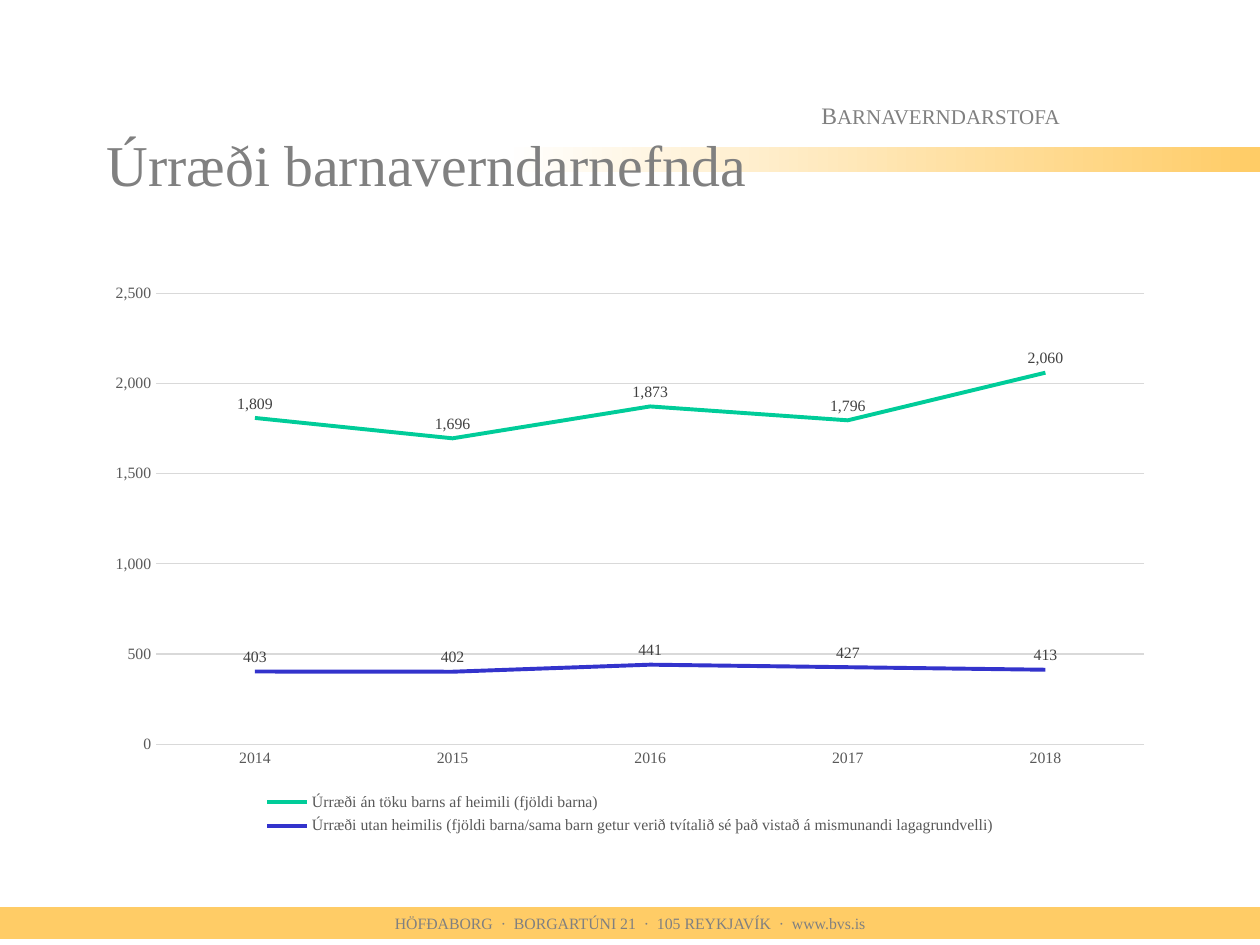
from pptx import Presentation, util as u
from pptx.chart import data as cd
from pptx.dml import color as dc
from pptx.enum import chart as ec, shapes as es, text as et

# Content
FACE = "Times New Roman"
GREY, GOLD, RULE, SOFT = "808080", "FFCC66", "D9D9D9", "595959"
TITLE = [("Úrræði barnaverndarnefnda", 33)]
HEAD = [("B", 13.5), ("ARNAVERNDARSTOFA", 12)]
FOOT = [("HÖFÐABORG  ·  BORGARTÚNI 21  ·  105 REYKJAVÍK  ·  www.bvs.is", 9)]
YEARS = ["2014", "2015", "2016", "2017", "2018"]
LINES = [
    ("Úrræði án töku barns af heimili (fjöldi barna)",
     "00CC99", [1809, 1696, 1873, 1796, 2060]),
    ("Úrræði utan heimilis (fjöldi barna/sama barn getur verið tvítalið "
     "sé það vistað á mismunandi lagagrundvelli)",
     "3333CC", [403, 402, 441, 427, 413]),
]

# Places in cm: left, top, width, height
WIDE, HIGH = 25.4, 19.05
EDGE = 1.9
BODY = WIDE - 2 * EDGE
AT = {
    "foot": (0, 18.29, WIDE, 0.64),
    "head": (16.31, 1.9, 8.05, 0.84),
    "band": (10.16, 2.97, WIDE - 10.16, 0.5),
    "title": (EDGE, 1.7, BODY, 3.18),
    "chart": (EDGE, 5.5, BODY, 11.43),
}


def place(name):
    return [u.Cm(n) for n in AT[name]]


def tint(code):
    return dc.RGBColor.from_string(code)


def setall(obj, vals):
    for key, val in vals.items():
        setattr(obj, key, val)


def style(font, size, code):
    setall(font, {"name": FACE, "size": u.Pt(size), "bold": False})
    font.color.rgb = tint(code)


def stroke(line, code, width):
    line.color.rgb = tint(code)
    line.width = u.Pt(width)


def write(shape, runs, side, mid=et.MSO_ANCHOR.MIDDLE):
    frame = shape.text_frame
    setall(frame, {"word_wrap": True, "vertical_anchor": mid})
    para = frame.paragraphs[0]
    para.alignment = side
    for words, size in runs:
        run = para.add_run()
        run.text = words
        style(run.font, size, GREY)


def bar(name):
    shape = page.shapes.add_shape(es.MSO_SHAPE.RECTANGLE, *place(name))
    shape.shadow.inherit = False
    shape.line.fill.background()
    return shape


deck = Presentation()
setall(deck, {"slide_width": u.Cm(WIDE), "slide_height": u.Cm(HIGH)})
page = deck.slides.add_slide(deck.slide_layouts[6])

# Footer
foot = bar("foot")
foot.fill.solid()
foot.fill.fore_color.rgb = tint(GOLD)
write(foot, FOOT, et.PP_ALIGN.CENTER)

# Header and fading band
head = page.shapes.add_textbox(*place("head"))
write(head, HEAD, et.PP_ALIGN.LEFT)
band = bar("band")
band.fill.gradient()
band.fill.gradient_angle = 0
for stop, spot, code in zip(band.fill.gradient_stops, (0, 1), ("FFFFFF", GOLD)):
    stop.position = spot
    stop.color.rgb = tint(code)

# Title
title = page.shapes.add_textbox(*place("title"))
write(title, TITLE, et.PP_ALIGN.LEFT)

# Chart
data = cd.CategoryChartData(number_format="#,##0")
data.categories = YEARS
for name, _, vals in LINES:
    data.add_series(name, vals)
chart = page.shapes.add_chart(
    ec.XL_CHART_TYPE.LINE, *place("chart"), data).chart
setall(chart, {"has_title": False, "has_legend": True})
style(chart.font, 10, "000000")
setall(chart.legend, {"position": ec.XL_LEGEND_POSITION.BOTTOM,
                      "include_in_layout": False})
style(chart.legend.font, 9, SOFT)

# Axes
cat, val = chart.category_axis, chart.value_axis
for axis in (cat, val):
    setall(axis, {"major_tick_mark": ec.XL_TICK_MARK.NONE,
                  "minor_tick_mark": ec.XL_TICK_MARK.NONE})
    style(axis.tick_labels.font, 9, SOFT)
stroke(cat.format.line, RULE, 0.75)
val.format.line.fill.background()
setall(val, {"has_major_gridlines": True, "minimum_scale": 0,
             "maximum_scale": 2500, "major_unit": 500})
stroke(val.major_gridlines.format.line, RULE, 0.75)
setall(val.tick_labels, {"number_format": "#,##0",
                         "number_format_is_linked": False})

# Series
chart.plots[0].vary_by_categories = False
for row, (_, code, _) in zip(chart.plots[0].series, LINES):
    row.smooth = False
    row.marker.style = ec.XL_MARKER_STYLE.NONE
    stroke(row.format.line, code, 2.25)
    tags = row.data_labels
    setall(tags, {"show_value": True,
                  "position": ec.XL_LABEL_POSITION.ABOVE})
    style(tags.font, 9, "404040")

deck.save("out.pptx")
